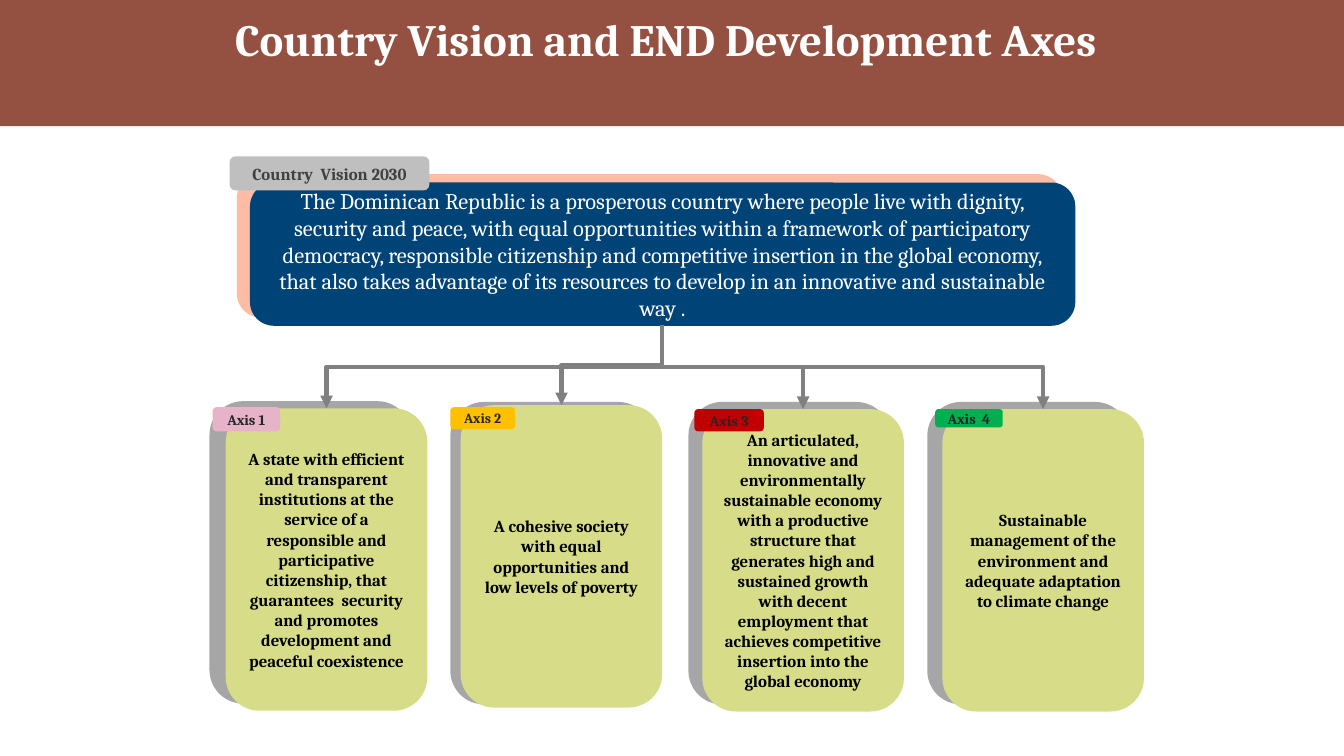
from typing import NamedTuple

from lxml.etree import SubElement
from pptx import Presentation
from pptx.dml.color import RGBColor
from pptx.enum.shapes import MSO_CONNECTOR as Link, MSO_SHAPE as Form
from pptx.enum.text import MSO_ANCHOR as Anchor, MSO_AUTO_SIZE as Fit, PP_ALIGN as Align
from pptx.oxml.ns import qn
from pptx.shapes.autoshape import Shape
from pptx.shapes.shapetree import SlideShapes
from pptx.util import Cm, Pt

FONT = "Cambria"
WHITE = RGBColor(0xFF, 0xFF, 0xFF)
BLACK = RGBColor(0, 0, 0)
BROWN = RGBColor(0x94, 0x51, 0x41)
NAVY = RGBColor(0x00, 0x43, 0x76)
PEACH = RGBColor(0xFC, 0xBC, 0xA6)
LIME = RGBColor(0xD7, 0xDC, 0x88)
PINK = RGBColor(0xE6, 0xB3, 0xC9)
AMBER = RGBColor(0xFF, 0xC0, 0x00)
RED = RGBColor(0xC0, 0x00, 0x00)
GREEN = RGBColor(0x00, 0xB0, 0x50)
SILVER = RGBColor(0xBF, 0xBF, 0xBF)
ASH = RGBColor(0xA6, 0xA6, 0xA6)
GRAY = RGBColor(0x80, 0x80, 0x80)
DARK = RGBColor(0x40, 0x40, 0x40)
COAL = RGBColor(0x26, 0x26, 0x26)

WIDE, HIGH = 33.87, 19.05
CARD_W, CARD_H = 5.08, 7.62
START_X, START_Y = 16.69, 8.2


class Box(NamedTuple):
    x: float
    y: float
    w: float
    h: float


class Axis(NamedTuple):
    card: Box
    back: Box
    tag: Box
    name: str
    size: float
    fill: RGBColor
    goal: str


def card(x: float, y: float) -> Box:
    return Box(x, y, CARD_W, CARD_H)


AXES = [
    Axis(card(5.69, 10.29), card(5.28, 10.11), Box(5.36, 10.26, 1.7, 0.61),
         "Axis 1", 10.5, PINK,
         "A state with efficient and transparent institutions at the service of "
         "a responsible and participative citizenship, that guarantees  security "
         "and promotes development and peaceful coexistence"),
    Axis(card(11.61, 10.21), card(11.35, 10.13), Box(11.35, 10.26, 1.63, 0.56),
         "Axis 2", 10, AMBER,
         "A cohesive society with equal opportunities and low levels of poverty"),
    Axis(card(17.7, 10.31), card(17.35, 10.13), Box(17.5, 10.31, 1.75, 0.56),
         "Axis 3", 10.5, RED,
         "An articulated, innovative and environmentally sustainable economy "
         "with a productive structure that generates high and sustained growth "
         "with decent employment that achieves competitive insertion into the "
         "global economy"),
    Axis(card(23.75, 10.31), card(23.37, 10.13), Box(23.57, 10.31, 1.7, 0.46),
         "Axis  4", 10.5, GREEN,
         "Sustainable management of the environment and adequate adaptation to "
         "climate change"),
]
VISION = (
    "The Dominican Republic is a prosperous country where people live with "
    "dignity, security and peace, with equal opportunities within a framework of "
    "participatory democracy, responsible citizenship and competitive insertion "
    "in the global economy, that also takes advantage of its resources to develop "
    "in an innovative and sustainable way ."
)


def write(shape: Shape, text: str, size: float, color: RGBColor, bold: bool = True) -> None:
    frame = shape.text_frame
    frame.text = text
    frame.word_wrap = True
    frame.vertical_anchor = Anchor.MIDDLE
    line = frame.paragraphs[0]
    line.alignment = Align.CENTER
    font = line.runs[0].font
    font.name, font.size, font.bold = FONT, Pt(size), bold
    font.color.rgb = color


def panel(shapes: SlideShapes, box: Box, fill: RGBColor) -> Shape:
    shape = shapes.add_shape(Form.ROUNDED_RECTANGLE, *map(Cm, box))
    shape.shadow.inherit = False
    shape.fill.solid()
    shape.fill.fore_color.rgb = fill
    shape.line.fill.background()
    return shape


def arrow(shapes: SlideShapes, end_x: float, end_y: float) -> None:
    """Bent arrow from the vision box, turned so that it leaves downwards."""
    mid_x, mid_y = (START_X + end_x) / 2, (START_Y + end_y) / 2
    right = end_x > START_X
    half_w = (end_y - START_Y) / 2 * (-1 if right else 1)
    half_h = abs(end_x - START_X) / 2
    link = shapes.add_connector(Link.ELBOW, Cm(mid_x - half_w), Cm(mid_y - half_h),
                                Cm(mid_x + half_w), Cm(mid_y + half_h))
    link.line.color.rgb = GRAY
    link.line.width = Pt(3)
    props = link.element.spPr
    props.find(qn("a:xfrm")).set("rot", str((270 if right else 90) * 60000))
    SubElement(props.find(qn("a:ln")), qn("a:tailEnd"), type="triangle")
    SubElement(props, qn("a:effectLst"))


def head(title: Shape) -> None:
    title.left, title.top, title.width, title.height = map(Cm, Box(0, 0, WIDE, 3.18))
    title.fill.solid()
    title.fill.fore_color.rgb = BROWN
    write(title, "Country Vision and END Development Axes", 32, WHITE)
    frame = title.text_frame
    frame.auto_size = Fit.NONE
    frame.vertical_anchor = Anchor.TOP
    frame.margin_top, frame.margin_right = Cm(0.45), Cm(0.55)
    frame.paragraphs[0].line_spacing = 0.9


def main() -> None:
    deck = Presentation()
    deck.slide_width, deck.slide_height = Cm(WIDE), Cm(HIGH)
    slide = deck.slides.add_slide(deck.slide_layouts[5])
    shapes = slide.shapes
    head(shapes.title)

    for axis in AXES:
        panel(shapes, axis.back, ASH)
        write(panel(shapes, axis.card, LIME), axis.goal, 12, BLACK)
        write(panel(shapes, axis.tag, axis.fill), axis.name, axis.size, COAL)

    panel(shapes, Box(5.97, 4.39, 20.8, 3.61), PEACH)
    write(panel(shapes, Box(6.3, 4.6, 20.8, 3.61), NAVY), VISION, 16, WHITE, False)
    write(panel(shapes, Box(5.79, 3.94, 5.03, 0.86), SILVER),
          "Country  Vision 2030", 12, DARK)

    for axis in AXES:
        arrow(shapes, axis.card.x + CARD_W / 2, axis.card.y)

    deck.save("out.pptx")


if __name__ == "__main__":
    main()
